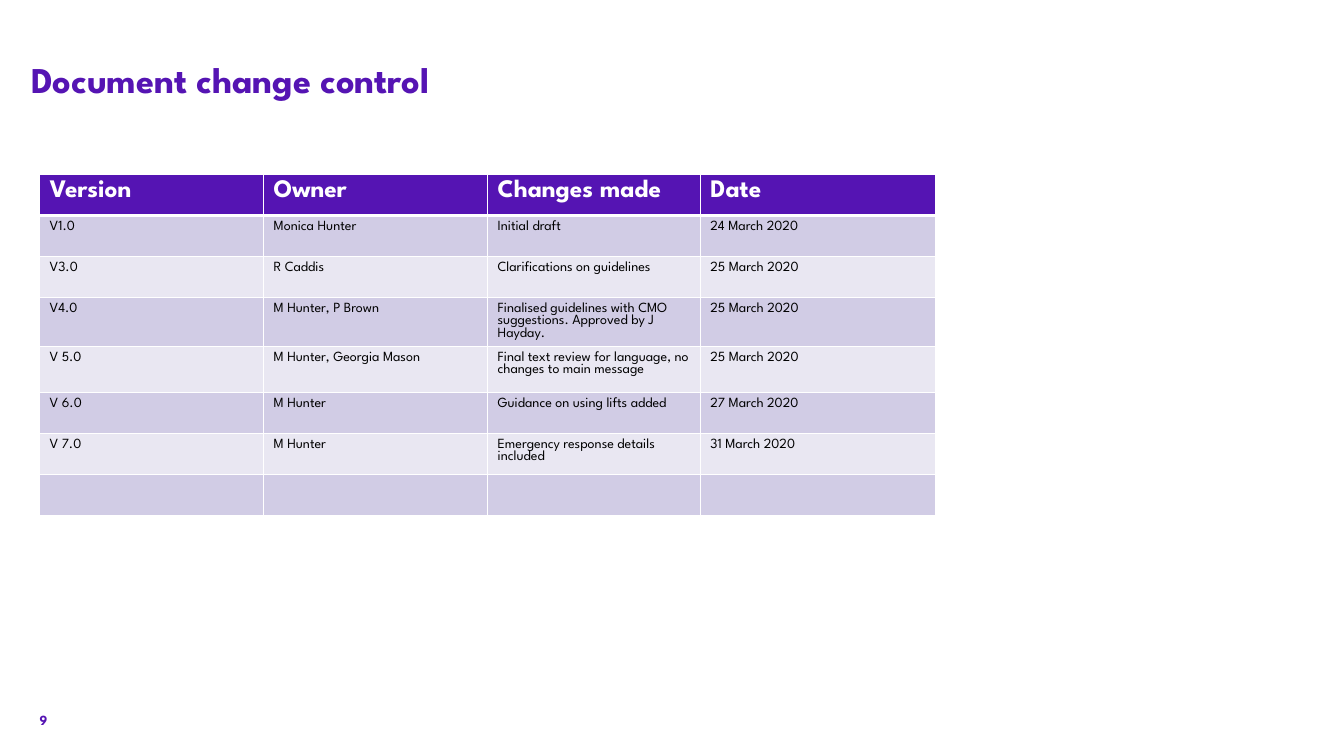
import lxml.etree
import pptx
import pptx.dml.color
import pptx.enum.text
import pptx.oxml.ns
import pptx.util

Pt = pptx.util.Pt
RGBColor = pptx.dml.color.RGBColor
Anchor = pptx.enum.text.MSO_ANCHOR

PURPLE = RGBColor(0x55, 0x14, 0xB3)
WHITE = RGBColor(0xFF, 0xFF, 0xFF)
BLACK = RGBColor(0x00, 0x00, 0x00)
BANDS = [RGBColor(0xD1, 0xCC, 0xE5), RGBColor(0xE9, 0xE7, 0xF2)]

HEADINGS = ["Version", "Owner", "Changes made", "Date"]
CHANGES = [
    ["V1.0", "Monica Hunter", "Initial draft", "24 March 2020"],
    ["V3.0", "R Caddis", "Clarifications on guidelines", "25 March 2020"],
    ["V4.0", "M Hunter, P Brown",
     "Finalised guidelines with CMO suggestions. Approved by J Hayday.", "25 March 2020"],
    ["V 5.0", "M Hunter, Georgia Mason",
     "Final text review for language, no changes to main message", "25 March 2020"],
    ["V 6.0", "M Hunter", "Guidance on using lifts added", "27 March 2020"],
    ["V 7.0", "M Hunter", "Emergency response details included", "31 March 2020"],
    ["", "", "", ""],
]
COLUMN_WIDTHS = [160, 160, 152, 168]
ROW_HEIGHTS = [29.2, 29.2, 29.2, 35, 33, 29.2, 29.2, 29.2]


def write_text(text_frame, text, font="League Spartan", size=10, color=BLACK, bold=False):
    paragraph = text_frame.paragraphs[0]
    paragraph.alignment = pptx.enum.text.PP_ALIGN.LEFT
    if not text:
        return
    run = paragraph.add_run()
    run.text = text
    run.font.name = font
    run.font.size = Pt(size)
    run.font.bold = bold
    run.font.color.rgb = color


class SlideBuilder:
    def __init__(self, presentation, accent=PURPLE):
        self.accent = accent
        self.slide = presentation.slides.add_slide(presentation.slide_layouts[5])

    def fill_box(self, shape, text, size, anchor, top_inset=0):
        text_frame = shape.text_frame
        text_frame.word_wrap = True
        text_frame.auto_size = pptx.enum.text.MSO_AUTO_SIZE.NONE
        text_frame.vertical_anchor = anchor
        text_frame.margin_left = text_frame.margin_right = text_frame.margin_bottom = 0
        text_frame.margin_top = Pt(top_inset)
        write_text(text_frame, text, size=size, color=self.accent, bold=True)

    def title(self, text, left, top, width, height):
        shape = self.slide.shapes.title
        shape.left, shape.top, shape.width, shape.height = map(Pt, (left, top, width, height))
        self.fill_box(shape, text, 25.9, Anchor.TOP, top_inset=8.5)

    def page_number(self, text, left, top, width, height):
        shape = self.slide.shapes.add_textbox(*map(Pt, (left, top, width, height)))
        self.fill_box(shape, text, 10, Anchor.BOTTOM)

    def cell_borders(self, cell, top_width, bottom_width):
        properties = cell._tc.get_or_add_tcPr()
        qn = pptx.oxml.ns.qn
        for side, width in (("L", 1), ("R", 1), ("T", top_width), ("B", bottom_width)):
            line = lxml.etree.SubElement(properties, qn(f"a:ln{side}"), w=str(Pt(width)))
            fill = lxml.etree.SubElement(line, qn("a:solidFill"))
            lxml.etree.SubElement(fill, qn("a:srgbClr"), val=str(WHITE))

    def table(self, rows, left, top, column_widths, row_heights):
        frame = self.slide.shapes.add_table(
            len(rows), len(column_widths), Pt(left), Pt(top),
            Pt(sum(column_widths)), Pt(sum(row_heights)))
        table = frame.table
        for column, width in zip(table.columns, column_widths):
            column.width = Pt(width)
        for index, (row, height, texts) in enumerate(zip(table.rows, row_heights, rows)):
            row.height = Pt(height)
            header = index == 0
            for cell, text in zip(row.cells, texts):
                self.cell_borders(cell, 3 if index == 1 else 1, 3 if header else 1)
                cell.fill.solid()
                cell.fill.fore_color.rgb = self.accent if header else BANDS[(index - 1) % 2]
                write_text(cell.text_frame, text, size=18 if header else 10,
                           color=WHITE if header else BLACK, bold=header)


def main():
    presentation = pptx.Presentation()
    presentation.slide_width = Pt(960)
    presentation.slide_height = Pt(540)
    builder = SlideBuilder(presentation)
    builder.title("Document change control", 22.3, 32.4, 367, 62.6)
    builder.table([HEADINGS] + CHANGES, 28.3, 124.8, COLUMN_WIDTHS, ROW_HEIGHTS)
    builder.page_number("9", 28.3, 499, 28, 21)
    presentation.save("out.pptx")


if __name__ == "__main__":
    main()
